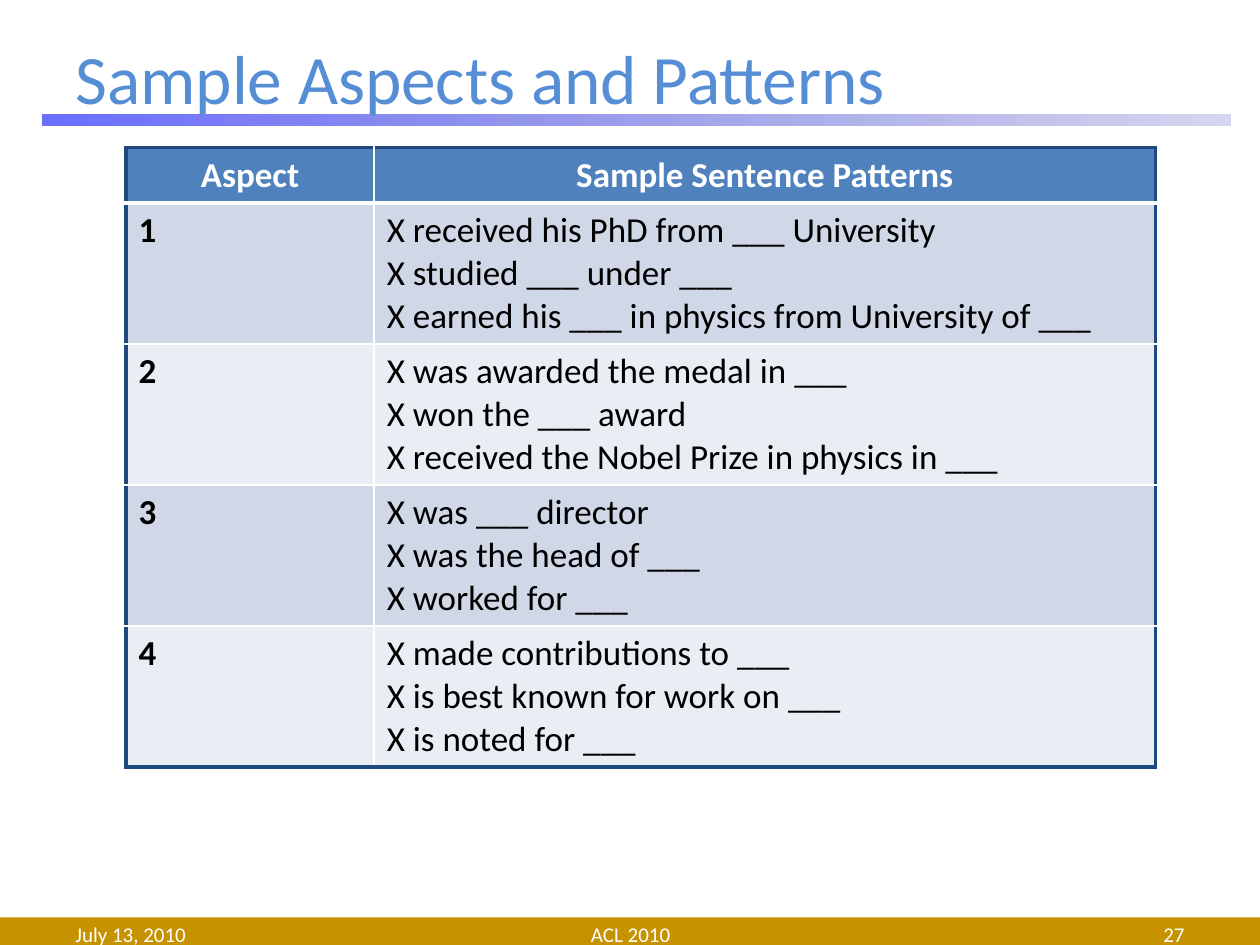
from pptx import Presentation, util as u
from pptx.dml.color import RGBColor
from pptx.enum import shapes, text
from pptx.oxml import parse_xml
from pptx.oxml.ns import nsdecls, qn

# Content
TITLE = "Sample Aspects and Patterns"
HEADER = ("Aspect", "Sample Sentence Patterns")
ASPECTS = [
    ("1", ["X received his PhD from ___ University",
           "X studied ___ under ___",
           "X earned his ___ in physics from University of ___"]),
    ("2", ["X was awarded the medal in ___",
           "X won the ___ award",
           "X received the Nobel Prize in physics in ___"]),
    ("3", ["X was ___ director",
           "X was the head of ___",
           "X worked for ___"]),
    ("4", ["X made contributions to ___",
           "X is best known for work on ___",
           "X is noted for ___"]),
]
LEFT, CENTER, RIGHT = (text.PP_ALIGN.LEFT, text.PP_ALIGN.CENTER,
                       text.PP_ALIGN.RIGHT)
FOOTER = [("July 13, 2010", 0.5, 2.33, LEFT), ("ACL 2010", 3.42, 3.17, CENTER),
          ("27", 7.17, 2.33, RIGHT)]
COLS = (1.97, 6.2)
HEADER_H, ROW_H = 0.44, 1.12

THEME = dict(
    font="Calibri", title="558ED5", white="FFFFFF", black="000000",
    footer="C69200", header="4F81BD", bands=("D0D8E8", "E9EDF4"),
    frame="1F497D", rule=(("464AFC", 80), ("3235B4", 20)),
    title_pt=39.6, table_pt=20, footer_pt=12,
    frame_pt=2.25, grid_pt=1, header_rule_pt=3,
)


def rgb(value):
    return RGBColor.from_string(value)


def write(tf, lines, size, color, bold=False, align=LEFT):
    """Fill a text frame with one paragraph per line."""
    for i, line in enumerate(lines):
        p = tf.paragraphs[0] if i == 0 else tf.add_paragraph()
        p.alignment = align
        r = p.add_run()
        r.text = line
        r.font.name, r.font.size, r.font.bold = THEME["font"], u.Pt(size), bold
        r.font.color.rgb = rgb(color)


def add_text(s, box, line, **fmt):
    tf = s.shapes.add_textbox(*map(u.Inches, box)).text_frame
    tf.word_wrap = True
    tf.vertical_anchor = text.MSO_ANCHOR.MIDDLE
    tf.margin_top = tf.margin_bottom = 0
    write(tf, [line], **fmt)


def add_bar(s, *box):
    sp = s.shapes.add_shape(shapes.MSO_SHAPE.RECTANGLE, *map(u.Inches, box))
    sp.shadow.inherit = False
    sp.line.fill.background()
    return sp


def set_borders(cell, **sides):
    """Each side is a (colour, points) pair; lines precede the cell fill."""
    tcPr = cell._tc.get_or_add_tcPr()
    for i, side in enumerate("LRTB"):
        color, pts = sides[side]
        tcPr.insert(i, parse_xml(
            f'<a:ln{side} {nsdecls("a")} w="{int(u.Pt(pts))}"><a:solidFill>'
            f'<a:srgbClr val="{color}"/></a:solidFill></a:ln{side}>'))


def add_table(s):
    last = len(ASPECTS)
    height = HEADER_H + last * ROW_H
    table = s.shapes.add_table(last + 1, 2, *map(
        u.Inches, (1, 1.17, sum(COLS), height))).table
    for col, width in zip(table.columns, COLS):
        col.width = u.Inches(width)
    frame = (THEME["frame"], THEME["frame_pt"])
    grid = (THEME["white"], THEME["grid_pt"])
    head_rule = (THEME["white"], THEME["header_rule_pt"])
    rows = [([HEADER[0]], [HEADER[1]])] + [([n], pats) for n, pats in ASPECTS]
    for i, row in enumerate(rows):
        head = i == 0
        table.rows[i].height = u.Inches(HEADER_H if head else ROW_H)
        for j, lines in enumerate(row):
            cell = table.cell(i, j)
            cell.fill.solid()
            cell.fill.fore_color.rgb = rgb(
                THEME["header"] if head else THEME["bands"][(i - 1) % 2])
            write(cell.text_frame, lines, size=THEME["table_pt"],
                  color=THEME["white" if head else "black"],
                  bold=head or j == 0, align=CENTER if head else LEFT)
            set_borders(
                cell, L=grid if j else frame, R=frame if j else grid,
                T=frame if head else head_rule if i == 1 else grid,
                B=head_rule if head else frame if i == last else grid)


def main():
    prs = Presentation()
    prs.slide_width, prs.slide_height = u.Inches(10), u.Inches(7.5)
    s = prs.slides.add_slide(prs.slide_layouts[6])

    # Footer band
    band = add_bar(s, 0, 7.28, 10, 0.25)
    band.fill.solid()
    band.fill.fore_color.rgb = rgb(THEME["footer"])

    # Fading rule under the title
    rule = add_bar(s, 0.34, 0.91, 9.43, 0.09)
    rule.fill.gradient()
    rule.fill.gradient_angle = 0
    for stop, (color, _) in zip(rule.fill.gradient_stops, THEME["rule"]):
        stop.color.rgb = rgb(color)
    for clr, (_, alpha) in zip(rule.element.spPr.iter(qn("a:srgbClr")),
                               THEME["rule"]):
        clr.append(parse_xml(f'<a:alpha {nsdecls("a")} val="{alpha * 1000}"/>'))

    # Title and footer text
    add_text(s, (0.5, 0.3, 9, 0.62), TITLE, size=THEME["title_pt"],
             color=THEME["title"])
    for line, left, width, align in FOOTER:
        add_text(s, (left, 7.33, width, 0.17), line, align=align,
                 size=THEME["footer_pt"], color=THEME["white"])

    # Aspect table
    add_table(s)
    prs.save("out.pptx")


if __name__ == "__main__":
    main()
